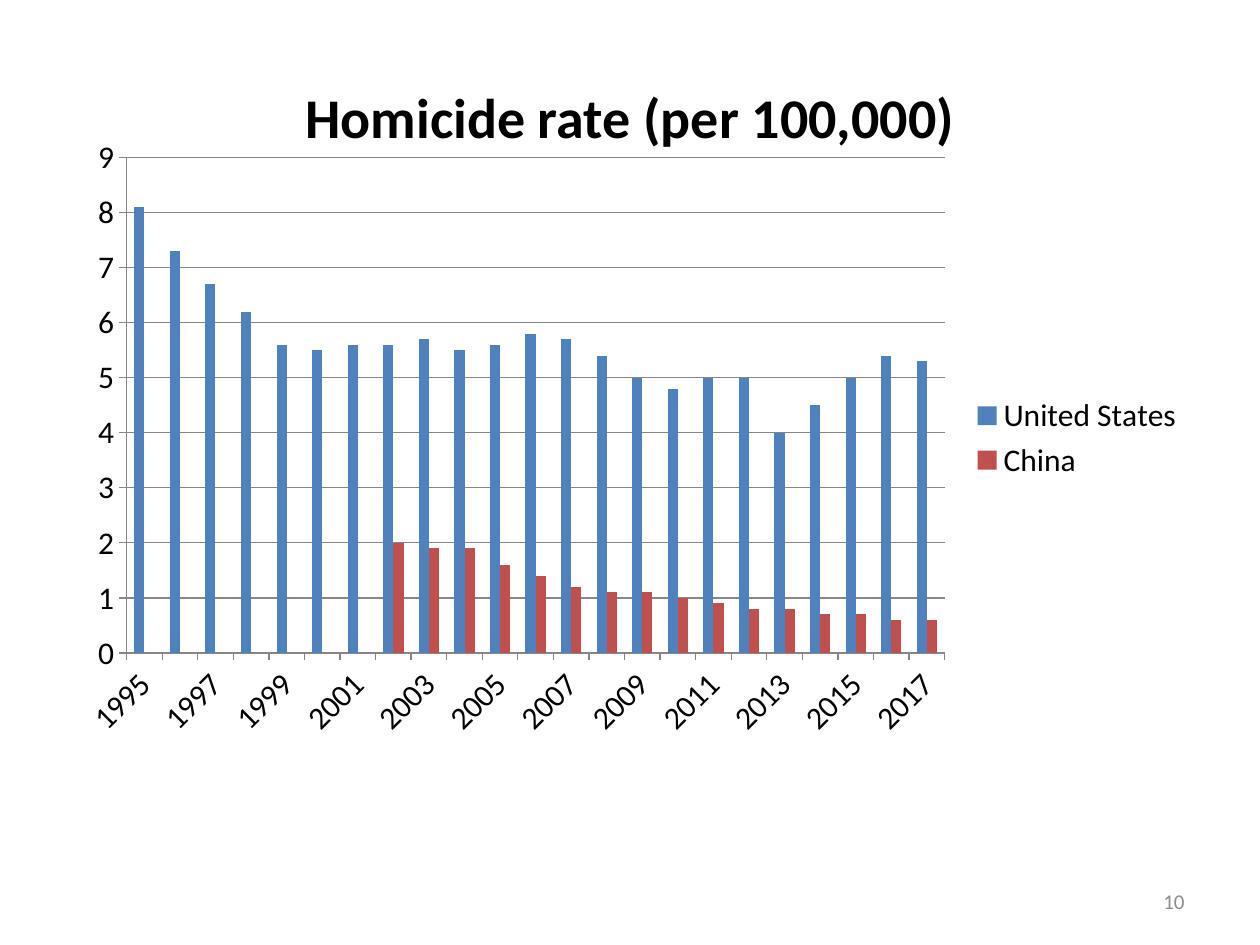
from pptx import Presentation
from pptx.chart.data import CategoryChartData
from pptx.dml.color import RGBColor
from pptx.enum.chart import XL_CHART_TYPE, XL_LEGEND_POSITION, XL_TICK_MARK
from pptx.enum.text import MSO_ANCHOR, PP_ALIGN
from pptx.util import Pt

PX = 914400 / 126
FONT = "Calibri"
COLORS = {
    "text": "000000",
    "number": "8C8C8C",
    "United States": "4F81BD",
    "China": "C0504D",
}
YEARS = range(1995, 2018)
RATES = {
    "United States": [8.1, 7.3, 6.7, 6.2, 5.6, 5.5, 5.6, 5.6, 5.7, 5.5, 5.6, 5.8,
                      5.7, 5.4, 5, 4.8, 5, 5, 4, 4.5, 5, 5.4, 5.3],
    "China": [None] * 7 + [2, 1.9, 1.9, 1.6, 1.4, 1.2, 1.1, 1.1, 1, 0.9, 0.8,
                           0.8, 0.7, 0.7, 0.6, 0.6],
}


def px(*lengths):
    return [round(length * PX) for length in lengths]


def color(name):
    return RGBColor.from_string(COLORS[name])


def style_font(font, size, name, bold=False):
    font.name = FONT
    font.size = Pt(size)
    font.bold = bold
    font.color.rgb = color(name)


def write_text(shape, text, size, name, alignment, bold=False):
    frame = shape.text_frame
    frame.word_wrap = True
    frame.vertical_anchor = MSO_ANCHOR.MIDDLE
    paragraph = frame.paragraphs[0]
    paragraph.alignment = alignment
    run = paragraph.add_run()
    run.text = text
    style_font(run.font, size, name, bold)


def add_title(slide, box):
    title = slide.shapes.title
    title.left, title.top, title.width, title.height = px(*box)
    write_text(title, "Homicide rate (per 100,000)", 32, "text", PP_ALIGN.CENTER, True)


def add_slide_number(slide, box):
    shape = slide.shapes.add_textbox(*px(*box))
    write_text(shape, "10", 12, "number", PP_ALIGN.RIGHT)


def add_rate_chart(slide, box):
    data = CategoryChartData()
    data.categories = [str(year) for year in YEARS]
    for country, rates in RATES.items():
        data.add_series(country, rates)
    chart = slide.shapes.add_chart(XL_CHART_TYPE.COLUMN_CLUSTERED, *px(*box), data).chart
    style_font(chart.font, 18, "text")
    chart.has_title = False
    chart.has_legend = True
    chart.legend.position = XL_LEGEND_POSITION.RIGHT
    chart.legend.include_in_layout = False

    plot = chart.plots[0]
    plot.gap_width = 150
    plot.overlap = 0
    plot.vary_by_categories = False
    for series in plot.series:
        series.format.fill.solid()
        series.format.fill.fore_color.rgb = color(series.name)

    for axis in (chart.category_axis, chart.value_axis):
        axis.major_tick_mark = XL_TICK_MARK.OUTSIDE
        axis.minor_tick_mark = XL_TICK_MARK.NONE
    chart.value_axis.has_major_gridlines = True


def main():
    presentation = Presentation()
    presentation.slide_width, presentation.slide_height = px(1260, 945)
    slide = presentation.slides.add_slide(presentation.slide_layouts[5])
    add_title(slide, (63, 38, 1134, 157))
    add_rate_chart(slide, (63, 126, 1134, 624))
    add_slide_number(slide, (903, 876, 294, 50))
    presentation.save("out.pptx")


if __name__ == "__main__":
    main()
